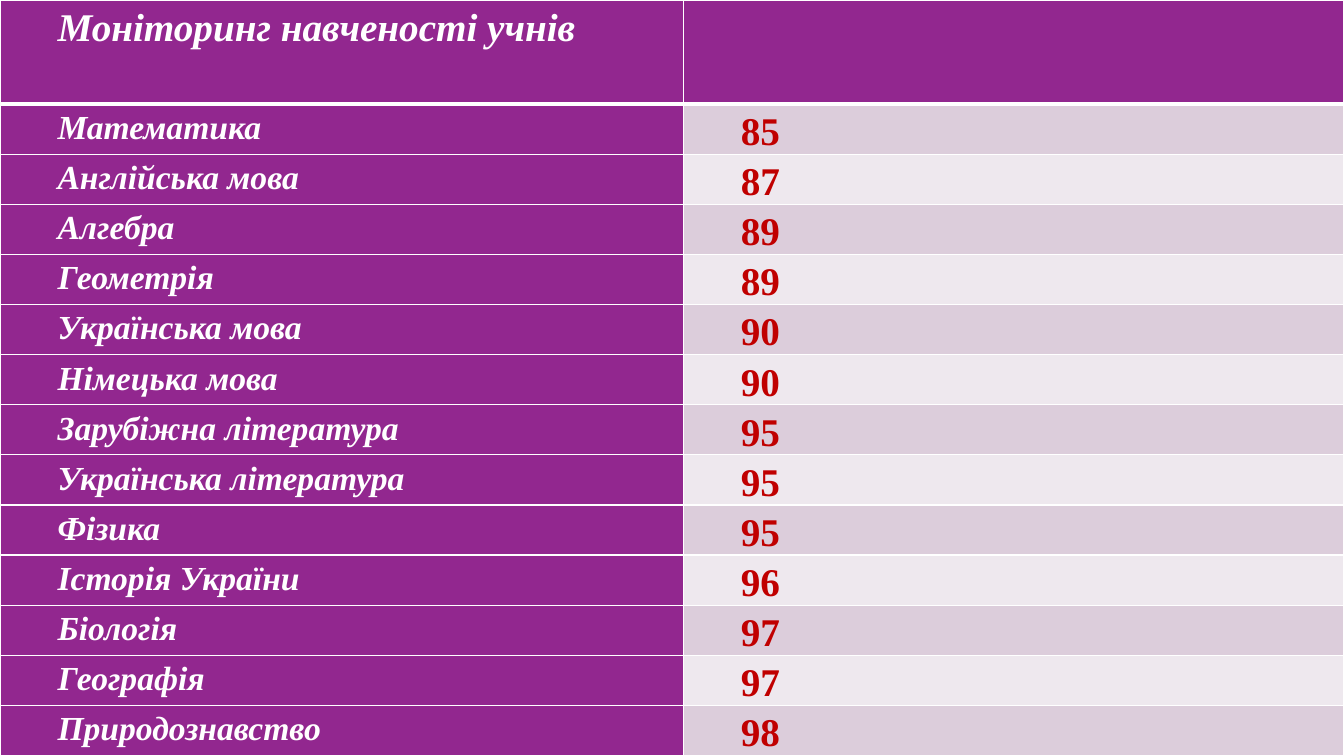
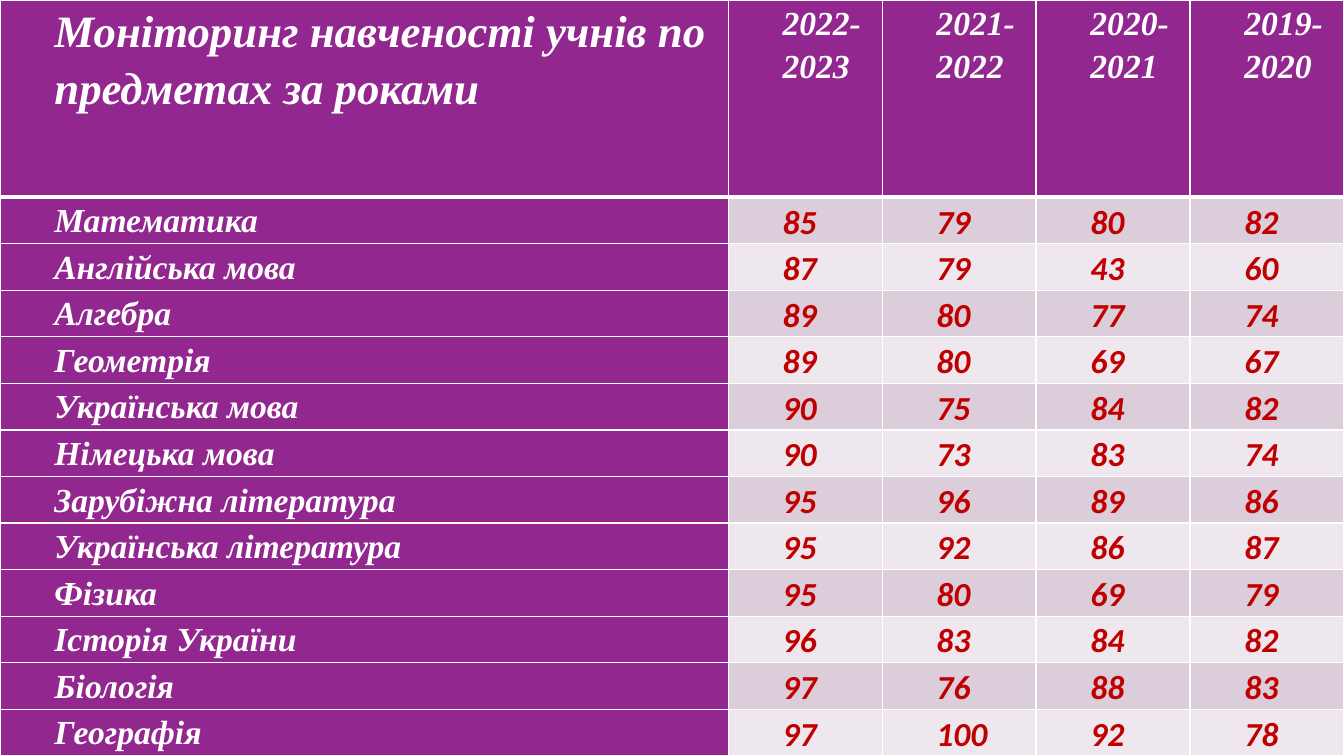
from dataclasses import dataclass

from lxml import etree
from pptx import Presentation
from pptx.dml.color import RGBColor
from pptx.oxml.ns import qn
from pptx.util import Cm, Pt

WIDE, HIGH = 33.87, 19.05
BLANK = 6


# Theme: colours, fonts and type sizes
@dataclass(frozen=True)
class Theme:
    plum: str = "92278F"
    bands: tuple = ("DCCDDB", "EEE8EE")
    white: str = "FFFFFF"
    red: str = "C00000"
    glow: tuple = ("F8F7F8", "D4D0D5")
    serif: str = "Times New Roman"
    sans: str = "Calibri"
    small: int = 24
    mid: int = 28
    large: int = 32
    indent: float = 1.27
    lead: float = 1.15
    snug: float = 1.12
    thin: int = 1
    thick: int = 3


# Scores by subject, latest year first
YEARS = ["2022-2023", "2021-2022", "2020-2021", "2019-2020"]
SCORES = {
    "Математика": [85, 79, 80, 82],
    "Англійська мова": [87, 79, 43, 60],
    "Алгебра": [89, 80, 77, 74],
    "Геометрія": [89, 80, 69, 67],
    "Українська мова": [90, 75, 84, 82],
    "Німецька мова": [90, 73, 83, 74],
    "Зарубіжна література": [95, 96, 89, 86],
    "Українська література": [95, 92, 86, 87],
    "Фізика": [95, 80, 69, 79],
    "Історія України": [96, 83, 84, 82],
    "Біологія": [97, 76, 88, 83],
    "Географія": [97, 100, 92, 78],
}


def write(frame, text, *, font, size, color, indent, lead, bold=True, italic=True):
    para = frame.paragraphs[0]
    para.line_spacing = lead
    props = para._p.get_or_add_pPr()
    props.set("marL", str(Cm(indent)))
    props.set("indent", "0")
    run = para.add_run()
    run.text = text
    run.font.name = font
    run.font.size = Pt(size)
    run.font.bold = bold
    run.font.italic = italic
    run.font.color.rgb = RGBColor.from_string(color)


class Deck:
    def __init__(self, theme):
        self.theme = theme
        self.prs = Presentation()
        self.prs.slide_width, self.prs.slide_height = Cm(WIDE), Cm(HIGH)
        self.slide = None
        self.backdrop()

    def backdrop(self):
        """Set the radial background that all slides share."""
        master = self.prs.slide_master
        fill = master.background.fill
        fill.gradient()
        for stop, color in zip(fill.gradient_stops, self.theme.glow):
            stop.color.rgb = RGBColor.from_string(color)
        grad = master.element.find(".//" + qn("a:gradFill"))
        grad.remove(grad.find(qn("a:lin")))
        ring = etree.SubElement(grad, qn("a:path"), path="circle")
        etree.SubElement(ring, qn("a:fillToRect"),
                         {side: "50000" for side in "ltrb"})

    def new(self):
        self.slide = self.prs.slides.add_slide(self.prs.slide_layouts[BLANK])

    def border(self, cell, row):
        """Draw white cell edges, with a thick rule under the header."""
        t = self.theme
        widths = {"L": t.thin, "R": t.thin,
                  "T": t.thick if row == 1 else t.thin,
                  "B": t.thick if row == 0 else t.thin}
        props = cell._tc.get_or_add_tcPr()
        for spot, (side, width) in enumerate(widths.items()):
            line = etree.Element(qn("a:ln" + side), w=str(Pt(width)))
            fill = etree.SubElement(line, qn("a:solidFill"))
            etree.SubElement(fill, qn("a:srgbClr"), val=t.white)
            props.insert(spot, line)

    def table(self, rows, widths, top, pad, style):
        """Fill the slide with a table; style(row, col) gives text format."""
        t = self.theme
        count = len(rows) - 1
        heights = [top] + [(HIGH - top) / count] * count
        grid = self.slide.shapes.add_table(
            len(rows), len(widths), 0, 0, Cm(sum(widths)), Cm(HIGH)).table
        for col, width in zip(grid.columns, widths):
            col.width = Cm(width)
        for r, (height, texts) in enumerate(zip(heights, rows)):
            grid.rows[r].height = Cm(height)
            for c, text in enumerate(texts):
                cell = grid.cell(r, c)
                head = r == 0 or c == 0
                cell.margin_left = cell.margin_right = Cm(pad)
                cell.margin_top = cell.margin_bottom = 0
                cell.fill.solid()
                cell.fill.fore_color.rgb = RGBColor.from_string(
                    t.plum if head else t.bands[(r - 1) % 2])
                self.border(cell, r)
                if text:
                    look = {"font": t.serif, "size": t.small,
                            "color": t.white if head else t.red,
                            "indent": t.indent, "lead": t.lead}
                    write(cell.text_frame, str(text), **{**look, **style(r, c)})

    def save(self):
        self.prs.save("out.pptx")


def main():
    theme = Theme()
    deck = Deck(theme)

    # Slide 1: latest score in each subject
    def latest(row, col):
        if row == 0:
            return {"size": theme.mid}
        return {"size": theme.mid, "italic": False} if col else {}

    rows = [["Моніторинг навченості учнів", ""]]
    rows += [[name, marks[0]] for name, marks in SCORES.items()]
    rows.append(["Природознавство", 98])
    deck.new()
    deck.table(rows, [17.22, WIDE - 17.22], 2.62, 0.18, latest)

    # Slide 2: scores over four years
    def yearly(row, col):
        if row == 0:
            return {} if col else {"size": theme.large}
        return {"font": theme.sans, "lead": theme.snug} if col else {}

    rows = [["Моніторинг навченості учнів по предметах за роками", *YEARS]]
    rows += [[name, *marks] for name, marks in SCORES.items()]
    deck.new()
    deck.table(rows, [18.35] + [3.88] * len(YEARS), 4.97, 0.1, yearly)

    deck.save()


if __name__ == "__main__":
    main()
